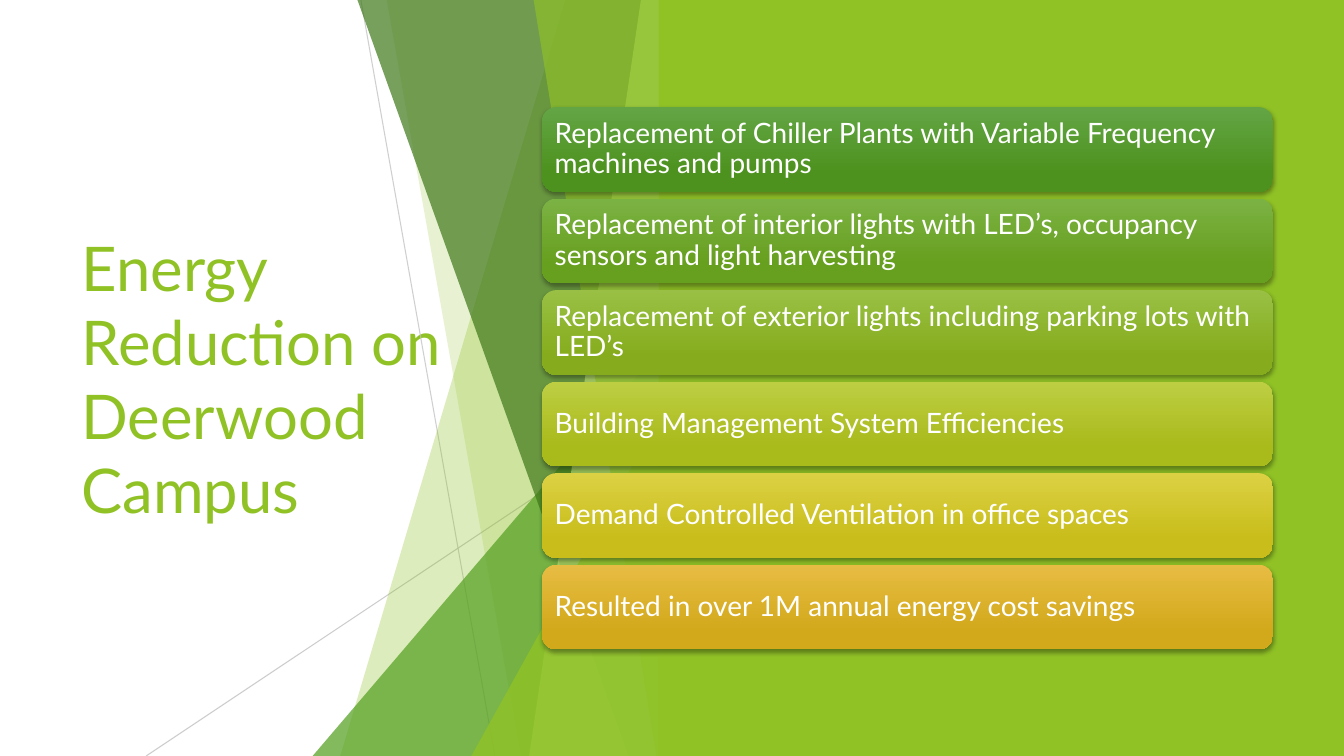
from lxml import etree
from pptx import Presentation
from pptx.dml.color import RGBColor
from pptx.enum.shapes import MSO_CONNECTOR, MSO_SHAPE
from pptx.enum.text import MSO_ANCHOR as ANCHOR, PP_ALIGN as ALIGN
from pptx.oxml import parse_xml
from pptx.oxml.ns import nsdecls, qn
from pptx.util import Pt

FONT = "Lato"
GREEN = "90C226"
WHITE = "FFFFFF"
FACET_RIGHT = 479.5
SLIDE_HEIGHT = 540

BARS = [
    ("Replacement of Chiller Plants with Variable Frequency machines and pumps", "63A545", "4D921E"),
    ("Replacement of interior lights with LED’s, occupancy sensors and light harvesting", "7BB244", "679F1E"),
    ("Replacement of exterior lights including parking lots with LED’s", "99C044", "86AC1D"),
    ("Building Management System Efficiencies", "BDCE43", "A9BA1B"),
    ("Demand Controlled Ventilation in office spaces", "DCD143", "C8BD1A"),
    ("Resulted in over 1M annual energy cost savings", "E7BC43", "D2A91B"),
]


def color(hex_string):
    """Turn a hex string into a colour."""
    return RGBColor.from_string(hex_string)


def set_opacity(element, percent):
    """Make the solid colour inside an element partly transparent."""
    solid = next(element.iter(qn("a:srgbClr")))
    etree.SubElement(solid, qn("a:alpha")).set("val", str(percent * 1000))


def paint(shape, fill, opacity=100):
    """Give a shape a flat fill without outline or shadow."""
    shape.shadow.inherit = False
    shape.line.fill.background()
    shape.fill.solid()
    shape.fill.fore_color.rgb = color(fill)
    if opacity < 100:
        set_opacity(shape.fill.fore_color._xFill, opacity)


def add_thin_line(slide, start, end, opacity):
    """Draw a thin grey line between two points."""
    line = slide.shapes.add_connector(
        MSO_CONNECTOR.STRAIGHT, *(Pt(value) for value in start + end))
    line.line.width = Pt(0.75)
    line.line.color.rgb = color("BFBFBF")
    properties = line._element.spPr
    set_opacity(properties, opacity)
    etree.SubElement(properties, qn("a:effectLst"))


def add_facet(slide, top_x, bottom_x, fill, opacity):
    """Draw a full-height facet with a slanted left edge."""
    top = -0.6
    builder = slide.shapes.build_freeform(top_x, top, scale=Pt(1))
    builder.add_line_segments(
        [(FACET_RIGHT, top), (FACET_RIGHT, SLIDE_HEIGHT), (bottom_x, SLIDE_HEIGHT)], close=True)
    paint(builder.convert_to_shape(), fill, opacity)


def add_corner_triangle(slide, left, top, fill, opacity):
    """Draw a right triangle rising to the right edge of the facets."""
    triangle = slide.shapes.add_shape(
        MSO_SHAPE.ISOSCELES_TRIANGLE, Pt(left), Pt(top),
        Pt(FACET_RIGHT - left), Pt(SLIDE_HEIGHT - top))
    triangle.adjustments[0] = 1
    paint(triangle, fill, opacity)


def add_panel(slide):
    """Draw the green panel on the right."""
    left = 470.6
    panel = slide.shapes.add_shape(
        MSO_SHAPE.RECTANGLE, Pt(left), 0, Pt(960 - left), Pt(SLIDE_HEIGHT))
    paint(panel, GREEN)


def add_soft_shadow(shape):
    """Put a soft shadow below a shape."""
    shape.shadow.inherit = False
    properties = shape._element.spPr
    properties.remove(properties.find(qn("a:effectLst")))
    properties.append(parse_xml(
        f'<a:effectLst {nsdecls("a")}>'
        f'<a:outerShdw blurRad="{Pt(3)}" dist="{Pt(2)}" dir="5400000" rotWithShape="0">'
        '<a:srgbClr val="000000"><a:alpha val="35000"/></a:srgbClr>'
        '</a:outerShdw></a:effectLst>'))


def format_text(shape, size, text_color):
    """Left-align text, centre it vertically and set its font."""
    frame = shape.text_frame
    frame.word_wrap = True
    frame.vertical_anchor = ANCHOR.MIDDLE
    paragraph = frame.paragraphs[0]
    paragraph.alignment = ALIGN.LEFT
    font = paragraph.runs[0].font
    font.name = FONT
    font.size = Pt(size)
    font.color.rgb = color(text_color)


def add_bar(slide, top, text, light, dark):
    """Draw a rounded gradient bar with its text."""
    bar = slide.shapes.add_shape(
        MSO_SHAPE.ROUNDED_RECTANGLE, Pt(387.2), Pt(top), Pt(522), Pt(60.6))
    bar.line.fill.background()
    bar.fill.gradient()
    bar.fill.gradient_angle = 270
    for stop, position, shade in zip(bar.fill.gradient_stops, (0, 0.78), (light, dark)):
        stop.position = position
        stop.color.rgb = color(shade)
    add_soft_shadow(bar)
    frame = bar.text_frame
    frame.text = text
    frame.margin_left = frame.margin_right = Pt(6)
    frame.margin_top = frame.margin_bottom = Pt(6)
    frame.paragraphs[0].line_spacing = 0.9
    format_text(bar, 20, WHITE)


def set_title(slide, text):
    """Place and format the title."""
    title = slide.shapes.title
    title.left, title.top, title.width, title.height = Pt(51), Pt(108.7), Pt(279.4), Pt(322.6)
    title.text_frame.text = text
    format_text(title, 44, GREEN)


def add_facets(slide):
    """Draw the layered lines, facets and triangles."""
    add_thin_line(slide, (257.8, 0), (353.5, SLIDE_HEIGHT), 75)
    add_thin_line(slide, (FACET_RIGHT, 290), (104.4, SLIDE_HEIGHT), 80)
    add_facet(slide, 403.9, 242.6, GREEN, 30)
    add_facet(slide, 276.3, 371.7, GREEN, 20)
    add_corner_triangle(slide, 223.3, 240, "54A021", 72)
    add_facet(slide, 254.9, 449.3, "3F7819", 70)
    add_facet(slide, 458.3, 378, "C0E474", 70)
    add_facet(slide, 381.4, 468.9, GREEN, 65)
    add_corner_triangle(slide, 336.7, 282.8, GREEN, 80)


def main():
    """Build and save the slide."""
    presentation = Presentation()
    presentation.slide_width, presentation.slide_height = Pt(960), Pt(SLIDE_HEIGHT)
    slide = presentation.slides.add_slide(presentation.slide_layouts[5])
    slide.background.fill.solid()
    slide.background.fill.fore_color.rgb = color(WHITE)
    set_title(slide, "Energy Reduction on Deerwood Campus")
    add_facets(slide)
    add_panel(slide)
    for index, (text, light, dark) in enumerate(BARS):
        add_bar(slide, 76.5 + index * 65.37, text, light, dark)
    presentation.save("out.pptx")


if __name__ == "__main__":
    main()
